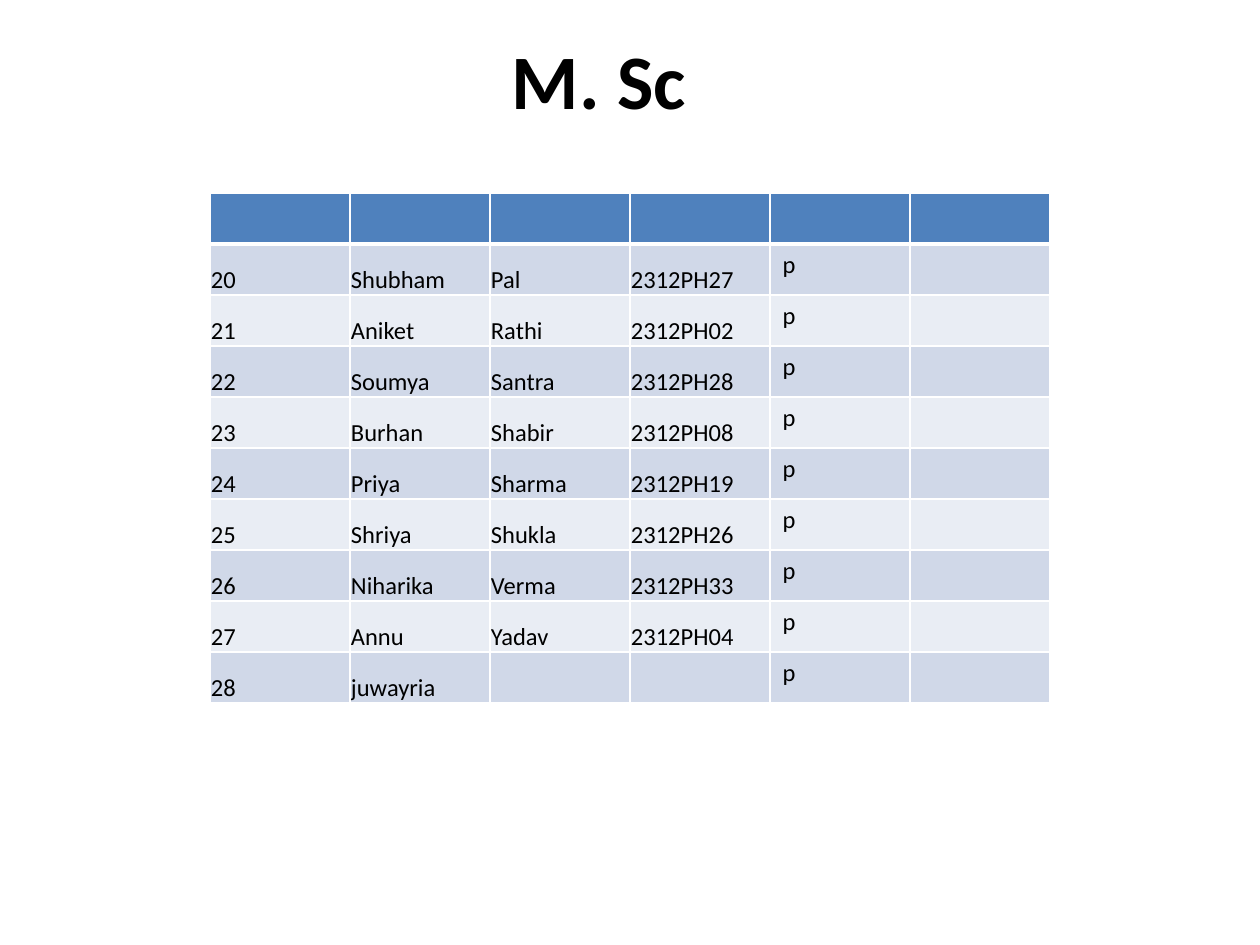
"""Build the M. Sc attendance slide with its student table."""
from lxml import etree
from pptx import Presentation
from pptx.dml.color import RGBColor
from pptx.enum.text import MSO_ANCHOR, PP_ALIGN
from pptx.oxml.ns import qn
from pptx.util import Emu, Pt

MIDDLE, BOTTOM, TOP = MSO_ANCHOR.MIDDLE, MSO_ANCHOR.BOTTOM, MSO_ANCHOR.TOP
LEFT, CENTER = PP_ALIGN.LEFT, PP_ALIGN.CENTER

TITLE = "M. Sc"
STUDENTS = [
    ("20", "Shubham", "Pal", "2312PH27", "p", ""),
    ("21", "Aniket", "Rathi", "2312PH02", "p", ""),
    ("22", "Soumya", "Santra", "2312PH28", "p", ""),
    ("23", "Burhan", "Shabir", "2312PH08", "p", ""),
    ("24", "Priya", "Sharma", "2312PH19", "p", ""),
    ("25", "Shriya", "Shukla", "2312PH26", "p", ""),
    ("26", "Niharika", "Verma", "2312PH33", "p", ""),
    ("27", "Annu", "Yadav", "2312PH04", "p", ""),
    ("28", "juwayria", "", "", "p", ""),
]
ATTENDANCE_COLUMN = 4
COLORS = {"text": "000000", "header": "4F81BD", "odd": "D0D8E8",
          "even": "E9EDF4", "border": "FFFFFF"}
FONT = "Calibri"
SLIDE_SIZE = (1260, 945)
TITLE_BOX = (32, 0, 1134, 158)
TABLE_LEFT, TABLE_TOP = 210, 193
COLUMN_WIDTH, ROW_HEIGHT = 140, 51


def px(length):
    """Turn px into EMU."""
    return Emu(length * 914400 // 126)


def write(frame, text, size=14, bold=False, align=LEFT):
    """Write one formatted paragraph into a text frame."""
    paragraph = frame.paragraphs[0]
    paragraph.alignment = align
    run = paragraph.add_run()
    run.text = text
    run.font.name, run.font.size, run.font.bold = FONT, Pt(size), bold
    run.font.color.rgb = RGBColor.from_string(COLORS["text"])


def set_borders(cell, widths):
    """Draw the cell borders, given as side: points."""
    properties = cell._tc.get_or_add_tcPr()
    for index, (side, width) in enumerate(widths.items()):
        line = etree.Element(qn(f"a:ln{side}"), w=str(Pt(width)))
        fill = etree.SubElement(line, qn("a:solidFill"))
        etree.SubElement(fill, qn("a:srgbClr"), val=COLORS["border"])
        properties.insert(index, line)


def add_title(slide):
    """Add the centred title."""
    frame = slide.shapes.add_textbox(*map(px, TITLE_BOX)).text_frame
    frame.word_wrap = True
    frame.vertical_anchor = MIDDLE
    write(frame, TITLE, size=44, bold=True, align=CENTER)


def add_students(slide):
    """Add the student table below an empty header row."""
    rows = [("",) * len(STUDENTS[0])] + STUDENTS
    table = slide.shapes.add_table(
        len(rows), len(rows[0]), px(TABLE_LEFT), px(TABLE_TOP),
        px(COLUMN_WIDTH * len(rows[0])), px(ROW_HEIGHT * len(rows))).table
    for column in table.columns:
        column.width = px(COLUMN_WIDTH)
    for r, values in enumerate(rows):
        table.rows[r].height = px(ROW_HEIGHT)
        band = "header" if r == 0 else "odd" if r % 2 else "even"
        for c, value in enumerate(values):
            cell = table.cell(r, c)
            cell.fill.solid()
            cell.fill.fore_color.rgb = RGBColor.from_string(COLORS[band])
            set_borders(cell, {"L": 1, "R": 1, "T": 3 if r == 1 else 1,
                               "B": 3 if r == 0 else 1})
            if c == ATTENDANCE_COLUMN and value:
                cell.vertical_anchor = TOP
            else:
                cell.vertical_anchor = BOTTOM
                cell.margin_left = cell.margin_right = cell.margin_top = px(1)
                cell.margin_bottom = 0
            if value:
                write(cell.text_frame, value)


def main():
    """Build and save the slide."""
    presentation = Presentation()
    presentation.slide_width, presentation.slide_height = map(px, SLIDE_SIZE)
    slide = presentation.slides.add_slide(presentation.slide_layouts[6])
    add_title(slide)
    add_students(slide)
    presentation.save("out.pptx")


if __name__ == "__main__":
    main()
